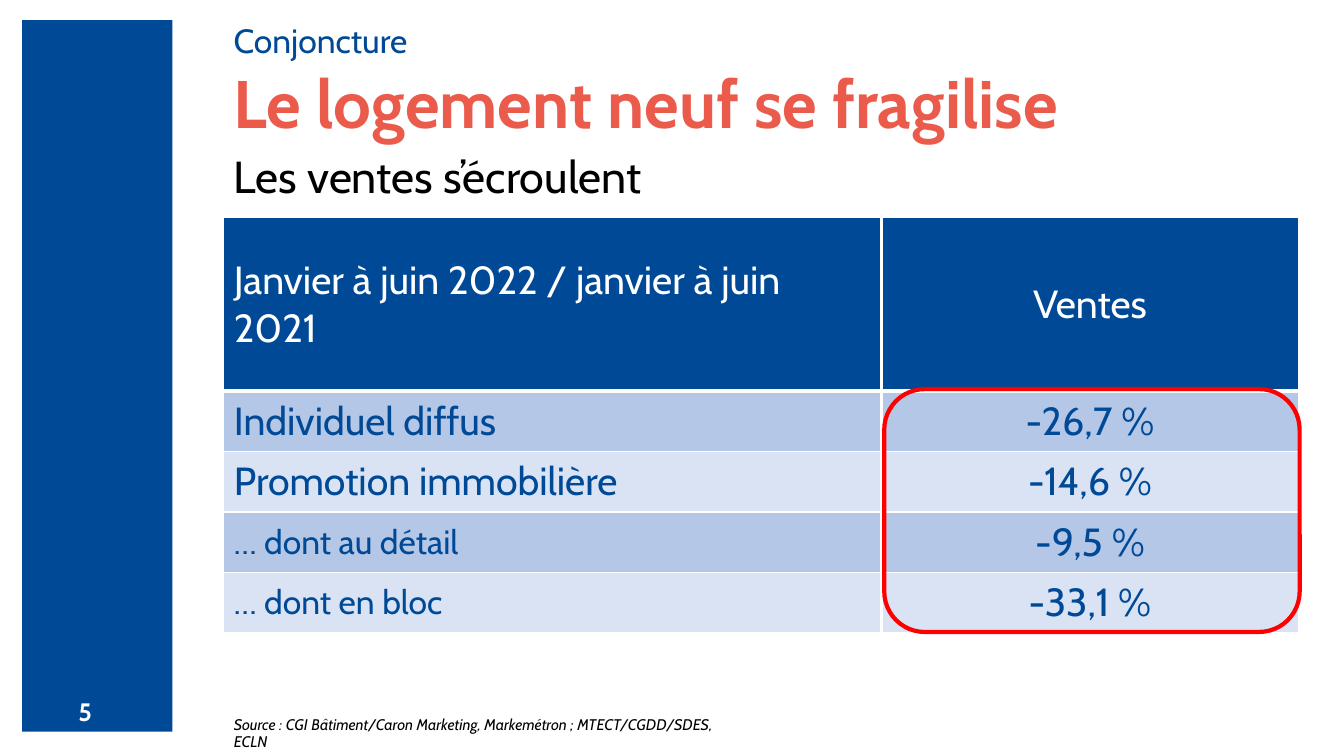
from lxml import etree
from pptx import Presentation
from pptx.dml.color import RGBColor
from pptx.enum import shapes, text
from pptx.oxml import ns
from pptx.util import Inches, Pt

BLUE = RGBColor(0x00, 0x49, 0x96)
CORAL = RGBColor(0xEB, 0x5B, 0x4C)
RED = RGBColor(0xFF, 0x00, 0x00)
WHITE = RGBColor(0xFF, 0xFF, 0xFF)
BLACK = RGBColor(0x00, 0x00, 0x00)
BANDS = RGBColor(0xB4, 0xC7, 0xE7), RGBColor(0xDA, 0xE3, 0xF3)


def style(para, size, color, **extra):
    para.font.color.rgb = color
    for key, value in dict(name="Cabin", size=Pt(size), **extra).items():
        setattr(para.font, key, value)


def edge(cell, **widths):
    """Draw white cell borders, given in points and in the order L, R, T, B."""
    props = cell._tc.get_or_add_tcPr()
    for index, (side, width) in enumerate(widths.items()):
        line = etree.Element(ns.qn("a:ln" + side), w=str(Pt(width)))
        fill = etree.SubElement(line, ns.qn("a:solidFill"))
        etree.SubElement(fill, ns.qn("a:srgbClr"), val=str(WHITE))
        props.insert(index, line)


deck = Presentation()
deck.slide_width, deck.slide_height = Inches(13.33), Inches(7.5)
slide = deck.slides.add_slide(deck.slide_layouts[6])

# Side band
band = slide.shapes.add_shape(shapes.MSO_SHAPE.RECTANGLE, Inches(0.22),
                              Inches(0.2), Inches(1.49), Inches(7.06))
band.shadow.inherit = False
band.fill.solid()
band.fill.fore_color.rgb = BLUE
band.line.fill.background()

# Page number, headings and source
TOP, BOTTOM = text.MSO_ANCHOR.TOP, text.MSO_ANCHOR.BOTTOM
labels = [
    ("5", (0.68, 6.86, 0.56, 0.4), 18, WHITE, TOP, 1, {"bold": True}),
    ("Conjoncture", (2.22, 0.26, 10.66, 0.39), 24, BLUE, BOTTOM, 0.9, {}),
    ("Le logement neuf se fragilise", (2.22, 0.65, 10.66, 0.83), 48, CORAL,
     TOP, 0.9, {"bold": True}),
    ("Les ventes s’écroulent", (2.22, 1.49, 10.66, 0.5), 32, BLACK,
     TOP, 0.9, {}),
    ("Source : CGI Bâtiment/Caron Marketing, Markemétron ; MTECT/CGDD/SDES, ECLN",
     (2.22, 7.07, 5.21, 0.28), 11, BLACK, TOP, 0.9, {"italic": True}),
]
for words, place, size, color, anchor, spacing, extra in labels:
    frame = slide.shapes.add_textbox(*map(Inches, place)).text_frame
    frame.word_wrap = True
    frame.vertical_anchor = anchor
    para = frame.paragraphs[0]
    para.text = words
    para.line_spacing = spacing
    style(para, size, color, **extra)

# Sales table
rows = [
    ("Janvier à juin 2022 / janvier à juin 2021", "Ventes"),
    ("Individuel diffus", "-26,7 %"),
    ("Promotion immobilière", "-14,6 %"),
    ("… dont au détail", "-9,5 %"),
    ("… dont en bloc", "-33,1 %"),
]
table = slide.shapes.add_table(len(rows), 2, Inches(2.22), Inches(2.16),
                               Inches(10.66), Inches(4.12)).table
for col, width in zip(table.columns, (6.52, 4.14)):
    col.width = Inches(width)
for r, row in enumerate(rows):
    table.rows[r].height = Inches(0.6 if r else 1.72)
    for c, words in enumerate(row):
        cell = table.cell(r, c)
        cell.vertical_anchor = text.MSO_ANCHOR.MIDDLE
        cell.fill.solid()
        cell.fill.fore_color.rgb = BANDS[(r - 1) % 2] if r else BLUE
        para = cell.text_frame.paragraphs[0]
        para.text = words
        para.alignment = text.PP_ALIGN.CENTER if c else text.PP_ALIGN.LEFT
        style(para, 24 if words.startswith("…") else 28,
              BLUE if r else WHITE, bold=False)
        edge(cell, L=2.25 if c else 1, R=1 if c else 2.25,
             T=3 if r == 1 else 1,
             B={0: 3, len(rows) - 1: 2.25}.get(r, 1))

# Red frame around the sales figures
ring = slide.shapes.add_shape(shapes.MSO_SHAPE.ROUNDED_RECTANGLE, Inches(8.77),
                              Inches(3.86), Inches(4.12), Inches(2.41))
ring.shadow.inherit = False
ring.fill.background()
ring.line.color.rgb = RED
ring.line.width = Pt(3)

deck.save("out.pptx")
